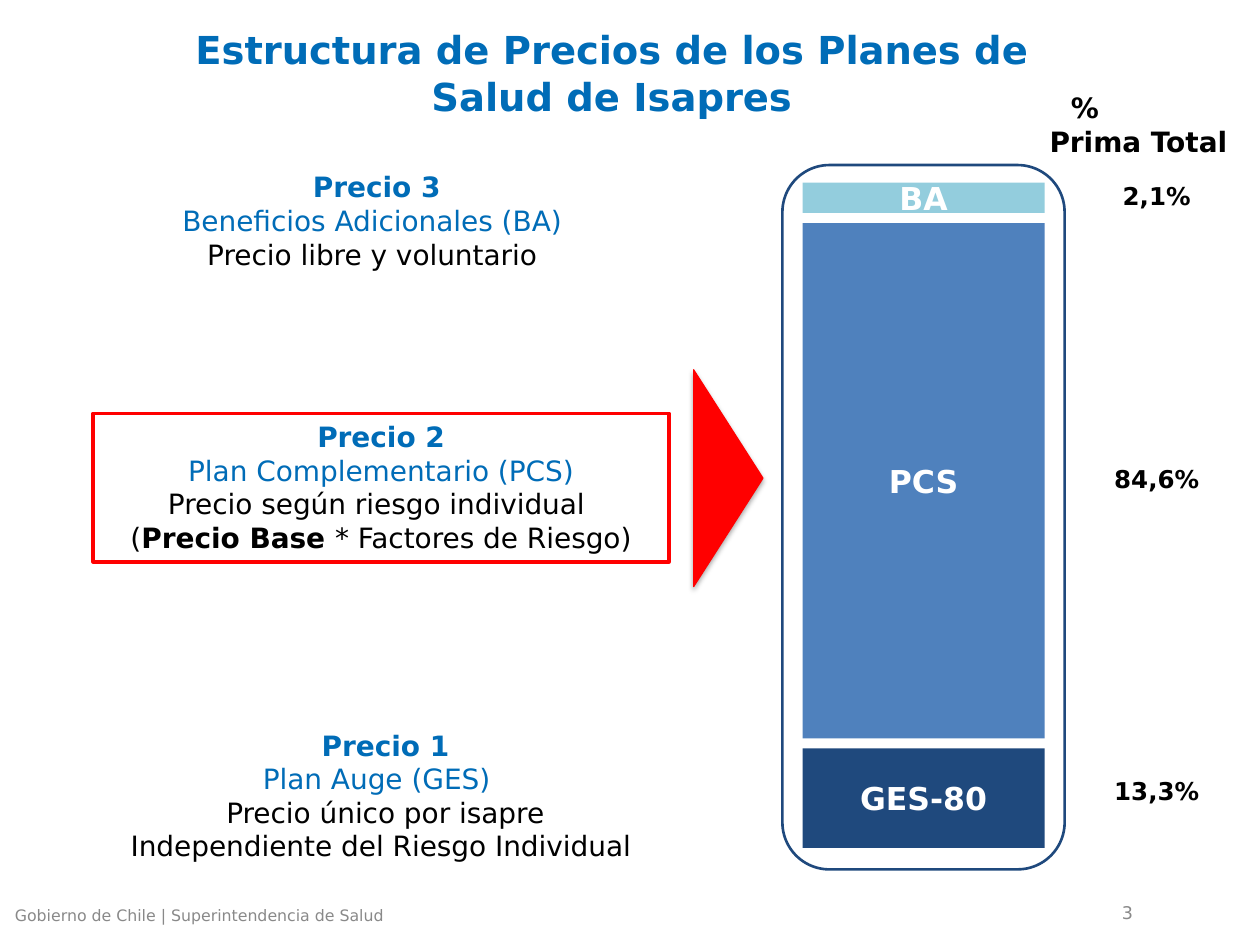
from dataclasses import dataclass

from lxml import etree
from pptx import Presentation
from pptx.dml.color import RGBColor
from pptx.enum.shapes import MSO_SHAPE
from pptx.enum.text import MSO_ANCHOR, PP_ALIGN
from pptx.oxml.ns import qn
from pptx.util import Inches, Pt

RECT, ROUND, TRIANGLE = MSO_SHAPE.RECTANGLE, MSO_SHAPE.ROUNDED_RECTANGLE, MSO_SHAPE.ISOSCELES_TRIANGLE
LEFT, CENTER, RIGHT = PP_ALIGN.LEFT, PP_ALIGN.CENTER, PP_ALIGN.RIGHT
TOP, MIDDLE = MSO_ANCHOR.TOP, MSO_ANCHOR.MIDDLE
FONT = "DejaVu Sans"
BLUE, NAVY, RED = "006CB7", "1F497D", "FF0000"
BLACK, WHITE, GRAY = "000000", "FFFFFF", "898989"

Box = tuple[float, float, float, float]


@dataclass
class Run:
    """A piece of text with one look."""
    text: str
    color: str = BLACK
    bold: bool = False


@dataclass
class Line:
    """A paragraph, optionally indented by some inches."""
    runs: list[Run]
    indent: float = 0
    align: PP_ALIGN = CENTER


@dataclass
class Shadow:
    """An outer shadow: opacity in percent, lengths in points, angle in degrees."""
    color: str
    opacity: int
    blur: float
    dist: float
    angle: int


@dataclass
class Tier:
    """A part of the premium, with its bar and its share."""
    name: str
    color: str
    top: float
    height: float
    share: str
    share_top: float


TIERS = [
    Tier("BA", "93CDDD", 1.45, 0.24, "2,1%", 1.39),
    Tier("PCS", "4F81BD", 1.77, 4.09, "84,6%", 3.63),
    Tier("GES-80", NAVY, 5.94, 0.79, "13,3%", 6.11),
]


def rgb(color: str) -> RGBColor:
    """Turn a hex string into a colour."""
    return RGBColor.from_string(color)


def write(sp, lines: list[Line], size: float, anchor=TOP, wrap: bool = True) -> None:
    """Fill a shape with formatted paragraphs."""
    tf = sp.text_frame
    for key, value in {"word_wrap": wrap, "vertical_anchor": anchor}.items():
        setattr(tf, key, value)
    for i, line in enumerate(lines):
        p = tf.paragraphs[0] if i == 0 else tf.add_paragraph()
        p.alignment = line.align
        if line.indent:
            p._p.get_or_add_pPr().set("marL", str(Inches(line.indent)))
        for run in line.runs:
            r = p.add_run()
            r.text = run.text
            for key, value in {"name": FONT, "size": Pt(size), "bold": run.bold}.items():
                setattr(r.font, key, value)
            r.font.color.rgb = rgb(run.color)


def add_text(s, box: Box, lines: list[Line], size: float, anchor=TOP) -> None:
    """Add a wrapped text box."""
    write(s.shapes.add_textbox(*map(Inches, box)), lines, size, anchor)


def add_shape(s, kind, box: Box, fill: str = "", line: str = "", width: float = 0,
              shadow: Shadow | None = None):
    """Add a preset shape with optional fill, outline and shadow."""
    sp = s.shapes.add_shape(kind, *map(Inches, box))
    sp.shadow.inherit = False
    if fill:
        sp.fill.solid()
        sp.fill.fore_color.rgb = rgb(fill)
    else:
        sp.fill.background()
    if line:
        sp.line.color.rgb = rgb(line)
        sp.line.width = Pt(width)
    else:
        sp.line.fill.background()
    if shadow:
        effects = sp._element.spPr.find(qn("a:effectLst"))
        outer = etree.SubElement(effects, qn("a:outerShdw"), blurRad=str(Pt(shadow.blur)),
                                 dist=str(Pt(shadow.dist)), dir=str(shadow.angle * 60000),
                                 rotWithShape="0")
        color = etree.SubElement(outer, qn("a:srgbClr"), val=shadow.color)
        etree.SubElement(color, qn("a:alpha"), val=str(shadow.opacity * 1000))
    return sp


def price_lines(title: str, plan: str, *details: Line, indent: float = 0) -> list[Line]:
    """Give the paragraphs that describe one price."""
    return [Line([Run(title, BLUE, True)], indent), Line([Run(plan, BLUE)]), *details]


def add_tier(s, tier: Tier) -> None:
    """Add the bar of a tier and its share of the premium."""
    bar = add_shape(s, RECT, (6.37, tier.top, 1.92, tier.height), tier.color)
    write(bar, [Line([Run(tier.name, WHITE, True)])], 18, MIDDLE, wrap=False)
    add_text(s, (8.67, tier.share_top, 1.02, 0.34), [Line([Run(tier.share, bold=True)])], 14)


def main() -> None:
    """Build the slide and save it."""
    prs = Presentation()
    prs.slide_width, prs.slide_height = Inches(10), Inches(7.5)
    s = prs.slides.add_slide(prs.slide_layouts[6])

    title = "Estructura de Precios de los Planes de Salud de Isapres"
    add_text(s, (0.96, 0.16, 7.79, 0.88), [Line([Run(title, BLUE, True)])], 22)
    footer = "Gobierno de Chile | Superintendencia de Salud"
    add_text(s, (0.02, 7.14, 3.17, 0.27), [Line([Run(footer, GRAY)], align=LEFT)], 9)
    add_text(s, (6.76, 7.14, 2.33, 0.21), [Line([Run("3", GRAY)], align=RIGHT)], 10, MIDDLE)

    add_text(s, (0.28, 1.3, 5.42, 0.91), price_lines(
        "Precio 3", "Beneficios Adicionales (BA) ",
        Line([Run("Precio libre y voluntario ")])), 16)
    frame = add_shape(s, RECT, (0.74, 3.28, 4.57, 1.18), line=RED, width=2)
    write(frame, price_lines(
        "Precio 2", "Plan Complementario (PCS)",
        Line([Run("Precio según riesgo individual ")]),
        Line([Run("("), Run("Precio Base ", bold=True), Run("* Factores de Riesgo)")])), 16)
    add_text(s, (0.36, 5.73, 5.26, 1.18), price_lines(
        "Precio 1", "Plan Auge (GES)",
        Line([Run("Precio único por isapre")], 0.14),
        Line([Run("Independiente del Riesgo Individual")], 0.07), indent=0.14), 16)

    arrow = add_shape(s, TRIANGLE, (4.92, 3.52, 1.72, 0.55), RED, RED, 0.75,
                      Shadow(BLACK, 35, 3.1, 1.8, 90))
    arrow.rotation = 90

    add_text(s, (8.11, 0.67, 1.85, 0.64), [
        Line([Run("%", bold=True)], 0.29, LEFT), Line([Run("Prima Total", bold=True)])], 16)
    for tier in TIERS:
        add_tier(s, tier)
    add_shape(s, ROUND, (6.21, 1.31, 2.24, 5.59), line=NAVY, width=1.5)
    prs.save("out.pptx")


if __name__ == "__main__":
    main()
